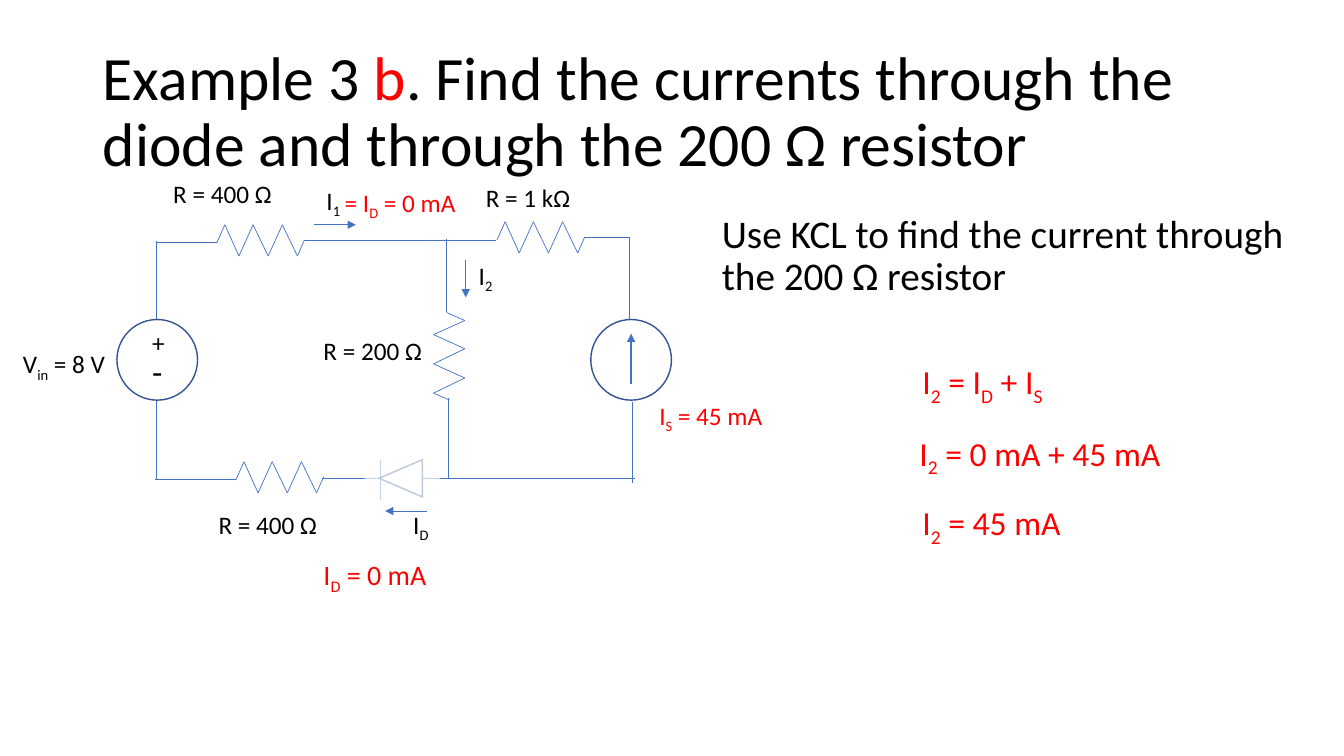
from itertools import pairwise

from lxml import etree
from pptx import Presentation
from pptx.dml.color import RGBColor
from pptx.enum.shapes import MSO_CONNECTOR, MSO_SHAPE
from pptx.enum.text import MSO_ANCHOR, MSO_AUTO_SIZE, PP_ALIGN
from pptx.oxml.ns import qn
from pptx.util import Inches, Pt

STRAIGHT = MSO_CONNECTOR.STRAIGHT
ELLIPSE, TRIANGLE, RECTANGLE = MSO_SHAPE.OVAL, MSO_SHAPE.ISOSCELES_TRIANGLE, MSO_SHAPE.RECTANGLE
MIDDLE, TOP, LEFT = MSO_ANCHOR.MIDDLE, MSO_ANCHOR.TOP, PP_ALIGN.LEFT
NO_FIT, GROW = MSO_AUTO_SIZE.NONE, MSO_AUTO_SIZE.SHAPE_TO_FIT_TEXT

FONT = "Calibri"
BLACK, RED, WHITE = "000000", "FF0000", "FFFFFF"
WIRE, OUTLINE = "4472C4", "325491"

ZIGZAG = [(0, 0), (0.08, 0.18), (0.22, -0.13), (0.36, 0.18), (0.51, -0.13),
          (0.65, 0.18), (0.8, -0.13), (0.87, 0.03)]

WIRES = [
    (1.55, 2.39, 1.55, 3.17), (1.55, 3.97, 1.55, 4.75), (1.55, 2.4, 2.15, 2.4),
    (3.02, 2.38, 4.92, 2.38), (1.54, 4.76, 2.34, 4.76), (6.3, 4.75, 4.2, 4.75),
    (3.76, 4.75, 3.19, 4.75), (3.77, 4.96, 3.77, 4.56), (4.43, 3.1, 4.43, 2.37),
    (4.45, 4.75, 4.45, 3.95), (6.24, 3.17, 6.24, 2.35), (6.27, 4.79, 6.27, 3.99),
    (6.24, 2.35, 5.79, 2.35),
]
RESISTORS = [(2.15, 2.41, False), (2.34, 4.76, False), (4.93, 2.38, False), (4.43, 3.1, True)]
CURRENT_ARROWS = [(3.11, 2.23, 3.53, 2.23), (4.62, 2.58, 4.62, 2.95), (4.24, 5.07, 3.82, 5.07)]

LABELS = [
    ("+", 1.41, 3.2, 0.36, 18, BLACK),
    ("-", 1.41, 3.43, 0.36, 24, BLACK),
    ("V|in| = 8 V", 0.13, 3.41, 1.07, 18, BLACK),
    ("R = 400 Ω", 1.62, 1.72, 1.2, 18, BLACK),
    ("R = 200 Ω", 3.11, 3.28, 1.2, 18, BLACK),
    ("R = 400 Ω", 2.07, 5, 1.2, 18, BLACK),
    ("R = 1 kΩ", 4.72, 1.76, 1.2, 18, BLACK),
    ("I|1|", 3.14, 1.79, 0.4, 18, BLACK),
    ("I|2|", 4.65, 2.53, 0.4, 18, BLACK),
    ("I|D|", 4, 5, 0.4, 18, BLACK),
    ("I|S| = 45 mA", 6.44, 3.92, 1.42, 18, RED),
]
EQUATIONS = [
    ("I|D| = 0 mA", 3.11, 5.49, 1.62, 0.53, 20),
    ("I|2| = I|D| + I|S|", 9.05, 3.54, 1.98, 0.63, 24),
    ("I|2| = 0 mA + 45 mA", 9.02, 4.25, 3.28, 0.63, 24),
    ("I|2| = 45 mA", 9.05, 4.94, 3.28, 0.63, 24),
    ("= I|D| = 0 mA", 3.32, 1.81, 1.62, 0.53, 18),
]


def rgb(hex_color):
    """Turn a hex string into a colour."""
    return RGBColor.from_string(hex_color)


def add_text(paragraph, marked, size, color):
    """Add runs to a paragraph; parts between bars are subscripts."""
    for index, part in enumerate(marked.split("|")):
        if not part:
            continue
        run = paragraph.add_run()
        run.text = part
        run.font.name = FONT
        run.font.size = Pt(size)
        run.font.color.rgb = rgb(color)
        if index % 2:
            run.font._element.set("baseline", "-25000")


def add_wire(shapes, ends, width=0.5, arrow=False):
    """Draw a straight wire, with an arrowhead at its end if wanted."""
    wire = shapes.add_connector(STRAIGHT, *(Inches(value) for value in ends))
    wire.line.color.rgb = rgb(WIRE)
    wire.line.width = Pt(width)
    if arrow:
        etree.SubElement(wire.line._get_or_add_ln(), qn("a:tailEnd"), type="triangle")
    etree.SubElement(wire._element.spPr, qn("a:effectLst"))


def add_resistor(shapes, x, y, vertical):
    """Draw a zigzag resistor from its starting point."""
    points = [(x + across, y + along) if vertical else (x + along, y - across)
              for along, across in ZIGZAG]
    for start, end in pairwise(points):
        add_wire(shapes, start + end)


def add_symbol(shapes, kind, x, y, width, height, rotation=0):
    """Draw an outlined circuit symbol."""
    symbol = shapes.add_shape(kind, Inches(x), Inches(y), Inches(width), Inches(height))
    symbol.shadow.inherit = False
    symbol.fill.background()
    symbol.line.color.rgb = rgb(OUTLINE)
    symbol.line.width = Pt(1)
    symbol.rotation = rotation


def add_label(shapes, marked, x, y, width, size, color):
    """Add a label to the circuit."""
    label = shapes.add_textbox(Inches(x), Inches(y), Inches(width), Inches(0.5 if size > 18 else 0.4))
    label.text_frame.word_wrap = True
    label.text_frame.auto_size = GROW
    add_text(label.text_frame.paragraphs[0], marked, size, color)


def add_equation(shapes, marked, x, y, width, height, size):
    """Add a red result."""
    equation = shapes.add_textbox(Inches(x), Inches(y), Inches(width), Inches(height))
    equation.text_frame.word_wrap = True
    paragraph = equation.text_frame.paragraphs[0]
    paragraph.line_spacing = 0.9
    paragraph.space_before = Pt(10)
    add_text(paragraph, marked, size, RED)


def add_veil(shapes, x, y, width, height):
    """Fade the diode with a translucent white rectangle."""
    veil = shapes.add_shape(RECTANGLE, Inches(x), Inches(y), Inches(width), Inches(height))
    veil.shadow.inherit = False
    veil.line.fill.background()
    veil.fill.solid()
    veil.fill.fore_color.rgb = rgb(WHITE)
    color = veil._element.spPr.find(qn("a:solidFill")).find(qn("a:srgbClr"))
    etree.SubElement(color, qn("a:alpha"), val="68000")


def fill_placeholder(placeholder, pieces, box, size, anchor, before):
    """Place a placeholder and write its coloured pieces of text."""
    placeholder.left, placeholder.top, placeholder.width, placeholder.height = map(Inches, box)
    frame = placeholder.text_frame
    frame.auto_size = NO_FIT
    frame.word_wrap = True
    frame.vertical_anchor = anchor
    paragraph = frame.paragraphs[0]
    paragraph.alignment = LEFT
    paragraph.line_spacing = 0.9
    paragraph.space_before = Pt(before)
    properties = paragraph._p.get_or_add_pPr()
    properties.set("marL", "0")
    properties.set("indent", "0")
    etree.SubElement(properties, qn("a:buNone"))
    for text, color in pieces:
        add_text(paragraph, text, size, color)


def draw_circuit(shapes):
    """Draw the wires, components and labels of the circuit."""
    for ends in WIRES:
        add_wire(shapes, ends)
    for resistor in RESISTORS:
        add_resistor(shapes, *resistor)
    for ends in CURRENT_ARROWS:
        add_wire(shapes, ends, arrow=True)
    for source_left in (1.16, 5.86):
        add_symbol(shapes, ELLIPSE, source_left, 3.17, 0.8, 0.8)
    add_wire(shapes, (6.26, 3.81, 6.26, 3.31), width=1.75, arrow=True)
    add_symbol(shapes, TRIANGLE, 3.79, 4.53, 0.37, 0.43, rotation=270)
    for label in LABELS:
        add_label(shapes, *label)


def main():
    """Build and save the slide."""
    deck = Presentation()
    deck.slide_width, deck.slide_height = Inches(13.33), Inches(7.5)
    slide = deck.slides.add_slide(deck.slide_layouts[1])
    title_pieces = [("Example 3 ", BLACK), ("b", RED),
                    (". Find the currents through the diode and through the 200 Ω resistor", BLACK)]
    fill_placeholder(slide.shapes.title, title_pieces, (0.92, 0.4, 11.5, 1.45), 44, MIDDLE, 0)
    task = [("Use KCL to find the current through the 200 Ω resistor", BLACK)]
    fill_placeholder(slide.placeholders[1], task, (7.06, 2.08, 6.14, 1.25), 28, TOP, 10)
    draw_circuit(slide.shapes.add_group_shape().shapes)
    add_veil(slide.shapes, 3.62, 4.32, 0.74, 0.68)
    for equation in EQUATIONS:
        add_equation(slide.shapes, *equation)
    deck.save("out.pptx")


if __name__ == "__main__":
    main()
